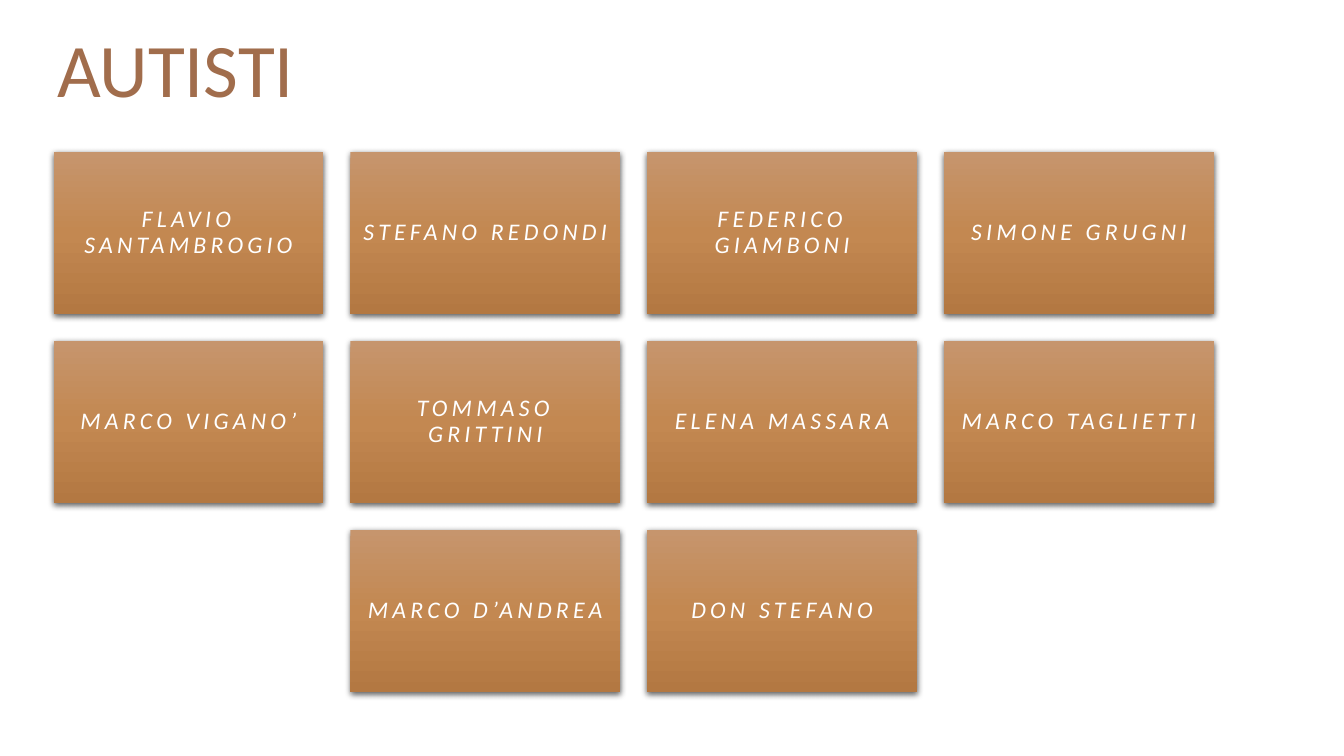
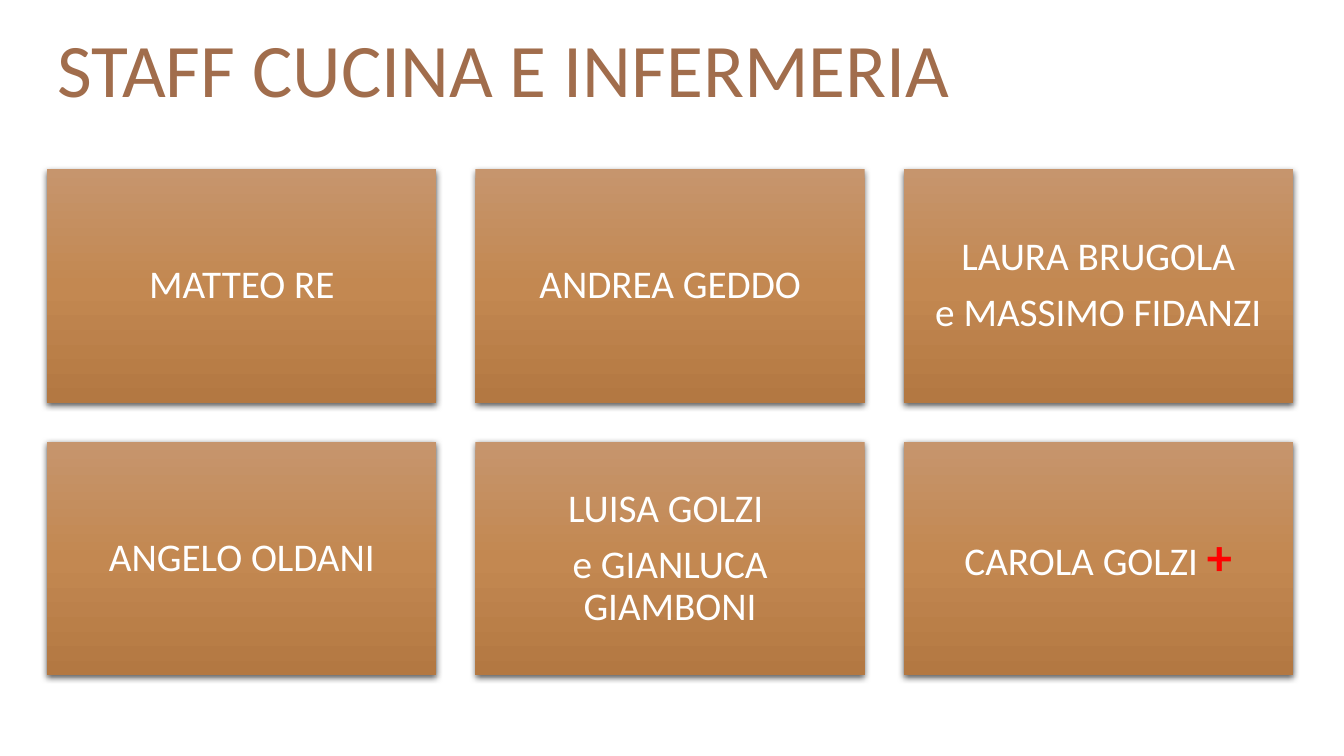
from copy import deepcopy
from dataclasses import dataclass

from pptx import Presentation
from pptx.dml.color import RGBColor
from pptx.enum.shapes import MSO_SHAPE
from pptx.enum.text import MSO_ANCHOR, PP_ALIGN
from pptx.oxml import parse_xml
from pptx.oxml.ns import nsdecls, qn
from pptx.slide import Slide
from pptx.text.text import TextFrame, _Paragraph
from pptx.util import Cm, Pt

RECT = MSO_SHAPE.RECTANGLE
MIDDLE, BOTTOM = MSO_ANCHOR.MIDDLE, MSO_ANCHOR.BOTTOM
LEFT, CENTER = PP_ALIGN.LEFT, PP_ALIGN.CENTER

FONT = "Calibri"
BROWN = RGBColor(0xA1, 0x6D, 0x4C)
WHITE = RGBColor(0xFF, 0xFF, 0xFF)
RED = RGBColor(0xFF, 0x00, 0x00)
STOPS = (
    (0, RGBColor(0xC6, 0x95, 0x6D)),
    (0.5, RGBColor(0xC3, 0x88, 0x51)),
    (1, RGBColor(0xB3, 0x78, 0x42)),
)
SHADOW = (
    f'<a:effectLst {nsdecls("a")}>'
    '<a:outerShdw blurRad="57150" dist="19050" dir="5400000" algn="ctr" rotWithShape="0">'
    '<a:srgbClr val="000000"><a:alpha val="63000"/></a:srgbClr>'
    "</a:outerShdw></a:effectLst>"
)


@dataclass(frozen=True)
class Tile:
    lines: tuple[str, ...]
    mark: str = ""


@dataclass(frozen=True)
class Grid:
    """Rows of tiles, each row centred; lengths are in centimetres."""
    title: str
    rows: tuple[tuple[Tile, ...], ...]
    left: float
    top: float
    width: float
    inset: float
    size: float
    italic: bool = False
    spread: int = 0


DRIVERS = Grid(
    "AUTISTI",
    (
        (Tile(("FLAVIO SANTAMBROGIO",)), Tile(("STEFANO REDONDI",)),
         Tile(("FEDERICO GIAMBONI",)), Tile(("SIMONE GRUGNI",))),
        (Tile(("MARCO VIGANO’",)), Tile(("TOMMASO GRITTINI",)),
         Tile(("ELENA MASSARA",)), Tile(("MARCO TAGLIETTI",))),
        (Tile(("MARCO D’ANDREA",)), Tile(("DON STEFANO",))),
    ),
    left=1.35, top=3.83, width=6.8, inset=0.18, size=17, italic=True, spread=3,
)
KITCHEN = Grid(
    "STAFF CUCINA E INFERMERIA",
    (
        (Tile(("MATTEO RE",)), Tile(("ANDREA GEDDO",)),
         Tile(("LAURA BRUGOLA", "e MASSIMO FIDANZI"))),
        (Tile(("ANGELO OLDANI",)), Tile(("LUISA GOLZI ", "e GIANLUCA GIAMBONI")),
         Tile(("CAROLA GOLZI ",), mark="+")),
    ),
    left=1.19, top=4.27, width=9.81, inset=0.3, size=28,
)


def write(line: _Paragraph, text: str, *, size: float, color: RGBColor = WHITE,
          bold: bool = False, italic: bool = False, spread: int = 0,
          align: PP_ALIGN = CENTER) -> None:
    """Add a run to a paragraph; spread is the letter spacing in points."""
    line.alignment = align
    line.line_spacing = 0.9
    run = line.add_run()
    run.text = text
    font = run.font
    font.name, font.size, font.color.rgb = FONT, Pt(size), color
    font.bold, font.italic = bold, italic
    if spread:
        font._element.set("spc", str(spread * 100))


def setup(frame: TextFrame, anchor: MSO_ANCHOR, side: float, edge: float) -> None:
    frame.word_wrap = True
    frame.vertical_anchor = anchor
    frame.margin_left = frame.margin_right = Cm(side)
    frame.margin_top = frame.margin_bottom = Cm(edge)


def add_title(slide: Slide, text: str) -> None:
    box = slide.shapes.add_textbox(Cm(1.19), Cm(0.46), Cm(29.59), Cm(2.54))
    setup(box.text_frame, BOTTOM, 0.25, 0.13)
    write(box.text_frame.paragraphs[0], text, size=54, color=BROWN, align=LEFT)


def add_tile(slide: Slide, tile: Tile, grid: Grid, left: float, top: float,
             height: float) -> None:
    card = slide.shapes.add_shape(RECT, Cm(left), Cm(top), Cm(grid.width), Cm(height))
    card.line.fill.background()
    card.fill.gradient()
    card.fill.gradient_angle = 270
    props = card._element.spPr
    stops = props.find(".//" + qn("a:gsLst"))
    stops.insert(1, deepcopy(stops[0]))
    for stop, (place, color) in zip(card.fill.gradient_stops, STOPS):
        stop.position, stop.color.rgb = place, color
    props.append(parse_xml(SHADOW))

    frame = card.text_frame
    setup(frame, MIDDLE, grid.inset, grid.inset)
    for i, text in enumerate(tile.lines):
        line = frame.add_paragraph() if i else frame.paragraphs[0]
        line.space_after = Pt(0.35 * grid.size)
        write(line, text, size=grid.size, italic=grid.italic, spread=grid.spread)
    if tile.mark:
        write(line, tile.mark, size=36, color=RED, bold=True)


def add_grid(slide: Slide, grid: Grid) -> None:
    """Draw tiles 5:3 in shape, with gaps a tenth of their width."""
    gap, height = grid.width * 0.1, grid.width * 0.6
    step = grid.width + gap
    most = max(len(row) for row in grid.rows)
    for r, row in enumerate(grid.rows):
        start = grid.left + (most - len(row)) / 2 * step
        for c, tile in enumerate(row):
            add_tile(slide, tile, grid, start + c * step,
                     grid.top + r * (height + gap), height)


def main() -> None:
    deck = Presentation()
    deck.slide_width, deck.slide_height = Cm(33.87), Cm(19.05)
    for grid in (DRIVERS, KITCHEN):
        slide = deck.slides.add_slide(deck.slide_layouts[6])
        add_title(slide, grid.title)
        add_grid(slide, grid)
    deck.save("out.pptx")


if __name__ == "__main__":
    main()
